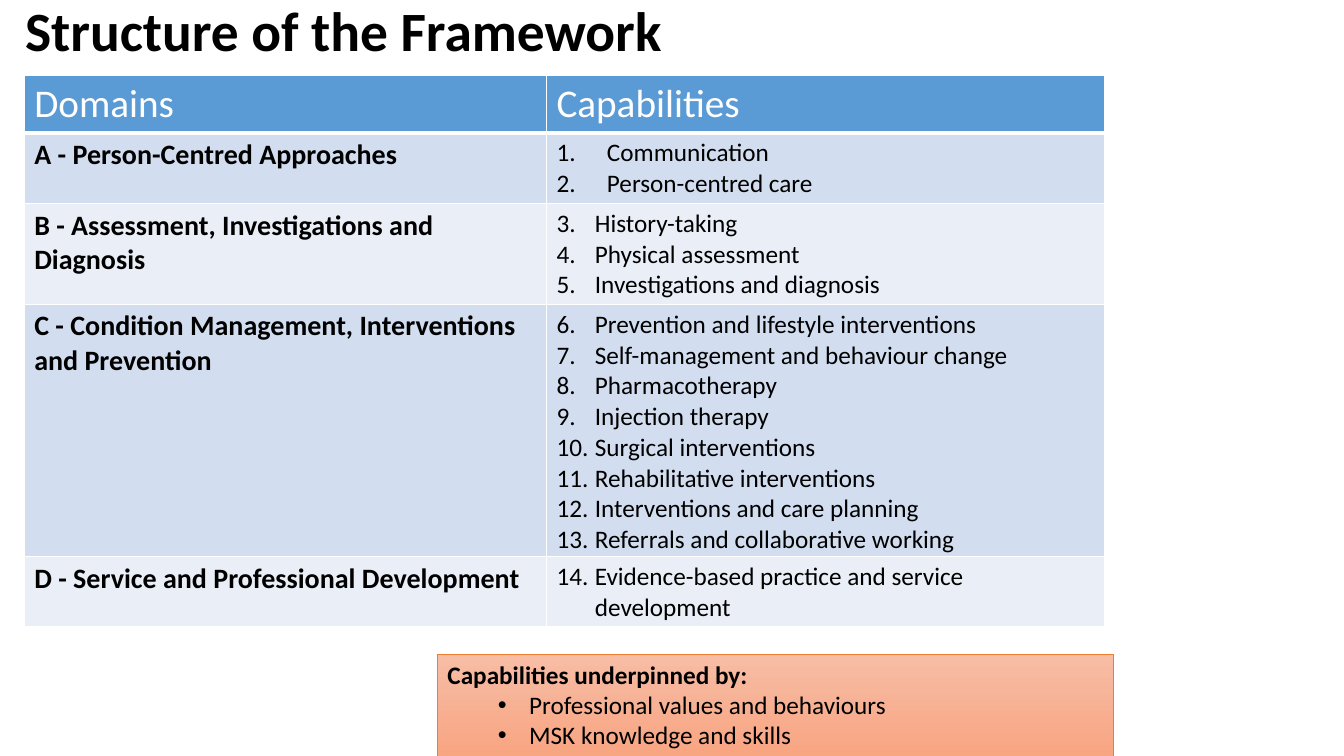
from lxml import etree
from pptx import Presentation
from pptx.dml.color import RGBColor
from pptx.enum.shapes import MSO_SHAPE
from pptx.enum.text import MSO_ANCHOR
from pptx.oxml.ns import qn
from pptx.util import Inches, Pt

RECTANGLE = MSO_SHAPE.RECTANGLE
TOP, MIDDLE = MSO_ANCHOR.TOP, MSO_ANCHOR.MIDDLE

TITLE = "Structure of the Framework"
HEADINGS = ["Domains", "Capabilities"]
DOMAINS = [
    ("A - Person-Centred Approaches", ["Communication", "Person-centred care"]),
    ("B - Assessment, Investigations and Diagnosis",
     ["History-taking", "Physical assessment", "Investigations and diagnosis"]),
    ("C - Condition Management, Interventions and Prevention",
     ["Prevention and lifestyle interventions", "Self-management and behaviour change",
      "Pharmacotherapy", "Injection therapy", "Surgical interventions",
      "Rehabilitative interventions", "Interventions and care planning",
      "Referrals and collaborative working"]),
    ("D - Service and Professional Development",
     ["Evidence-based practice and service development"]),
]
UNDERPINNING_HEADING = "Capabilities underpinned by:"
UNDERPINNINGS = ["Professional values and behaviours", "MSK knowledge and skills"]

FONT = "Calibri"
COLORS = {"text": "000000", "white": "FFFFFF", "header": "5B9BD5",
          "odd": "D2DEEF", "even": "EAEFF7", "box_top": "F7BDA5",
          "box_bottom": "F8A582", "box_line": "ED7D31"}
SLIDE_SIZE = (13.33, 7.5)
TITLE_AREA = (0.15, 0, 7.28, 0.67)
TABLE_ORIGIN = (0.24, 0.75)
COLUMN_WIDTHS = [5.18, 5.54]
ROW_HEIGHTS = [0.54, 0.67, 0.96, 2.4, 0.6]
BOX_AREA = (4.34, 6.49, 6.7, 1.01)


def rgb(name):
    return RGBColor.from_string(COLORS[name])


def write(paragraph, text, size, bold=False, color="text"):
    paragraph.text = text
    font = paragraph.font
    font.name, font.size, font.bold = FONT, Pt(size), bold
    font.color.rgb = rgb(color)


def add_bullet(paragraph, indent, hanging, tag, **attributes):
    properties = paragraph._p.get_or_add_pPr()
    properties.set("marL", str(Inches(indent)))
    properties.set("indent", str(-Inches(hanging)))
    etree.SubElement(properties, qn("a:buFont"), typeface="Arial" if tag == "a:buChar" else "+mj-lt")
    etree.SubElement(properties, qn(tag), **attributes)


def style_cell(cell, fill, bottom_width=1):
    cell.fill.solid()
    cell.fill.fore_color.rgb = rgb(fill)
    properties = cell._tc.get_or_add_tcPr()
    widths = {"a:lnL": 1, "a:lnR": 1, "a:lnT": 1, "a:lnB": bottom_width}
    for position, (tag, width) in enumerate(widths.items()):
        line = etree.Element(qn(tag), w=str(Pt(width)))
        solid = etree.SubElement(line, qn("a:solidFill"))
        etree.SubElement(solid, qn("a:srgbClr"), val=COLORS["white"])
        properties.insert(position, line)


def add_title(slide):
    frame = slide.shapes.add_textbox(*map(Inches, TITLE_AREA)).text_frame
    frame.word_wrap = True
    frame.vertical_anchor = MIDDLE
    paragraph = frame.paragraphs[0]
    paragraph.line_spacing = 0.9
    write(paragraph, TITLE, 39.6, bold=True)


def add_framework_table(slide):
    area = (*TABLE_ORIGIN, sum(COLUMN_WIDTHS), sum(ROW_HEIGHTS))
    table = slide.shapes.add_table(len(ROW_HEIGHTS), len(COLUMN_WIDTHS), *map(Inches, area)).table
    table.first_row = table.horz_banding = False
    for column, width in zip(table.columns, COLUMN_WIDTHS):
        column.width = Inches(width)
    for row, height in zip(table.rows, ROW_HEIGHTS):
        row.height = Inches(height)

    for column, heading in enumerate(HEADINGS):
        cell = table.cell(0, column)
        style_cell(cell, "header", bottom_width=3)
        write(cell.text_frame.paragraphs[0], heading, 28, color="white")

    start = 1
    for row, (domain, capabilities) in enumerate(DOMAINS, 1):
        domain_cell, capability_cell = table.cell(row, 0), table.cell(row, 1)
        for cell in (domain_cell, capability_cell):
            style_cell(cell, "odd" if row % 2 else "even")
        write(domain_cell.text_frame.paragraphs[0], domain, 20, bold=True)
        indent = 0.5 if row == 1 else 0.38
        frame = capability_cell.text_frame
        for index, capability in enumerate(capabilities):
            paragraph = frame.add_paragraph() if index else frame.paragraphs[0]
            add_bullet(paragraph, indent, indent, "a:buAutoNum",
                       type="arabicPeriod", startAt=str(start))
            write(paragraph, capability, 18)
        start += len(capabilities)


def add_underpinning_box(slide):
    box = slide.shapes.add_shape(RECTANGLE, *map(Inches, BOX_AREA))
    box.shadow.inherit = False
    box.fill.gradient()
    box.fill.gradient_angle = 270
    for stop, color in zip(box.fill.gradient_stops, ("box_top", "box_bottom")):
        stop.color.rgb = rgb(color)
    box.line.color.rgb = rgb("box_line")
    box.line.width = Pt(0.5)
    frame = box.text_frame
    frame.word_wrap = True
    frame.vertical_anchor = TOP
    write(frame.paragraphs[0], UNDERPINNING_HEADING, 18, bold=True)
    for item in UNDERPINNINGS:
        paragraph = frame.add_paragraph()
        paragraph.level = 1
        add_bullet(paragraph, 0.81, 0.31, "a:buChar", char="•")
        write(paragraph, item, 18)
    for paragraph in frame.paragraphs:
        paragraph._p.get_or_add_pPr().set("algn", "l")


def main():
    presentation = Presentation()
    presentation.slide_width, presentation.slide_height = map(Inches, SLIDE_SIZE)
    slide = presentation.slides.add_slide(presentation.slide_layouts[6])
    add_title(slide)
    add_framework_table(slide)
    add_underpinning_box(slide)
    presentation.save("out.pptx")


if __name__ == "__main__":
    main()
